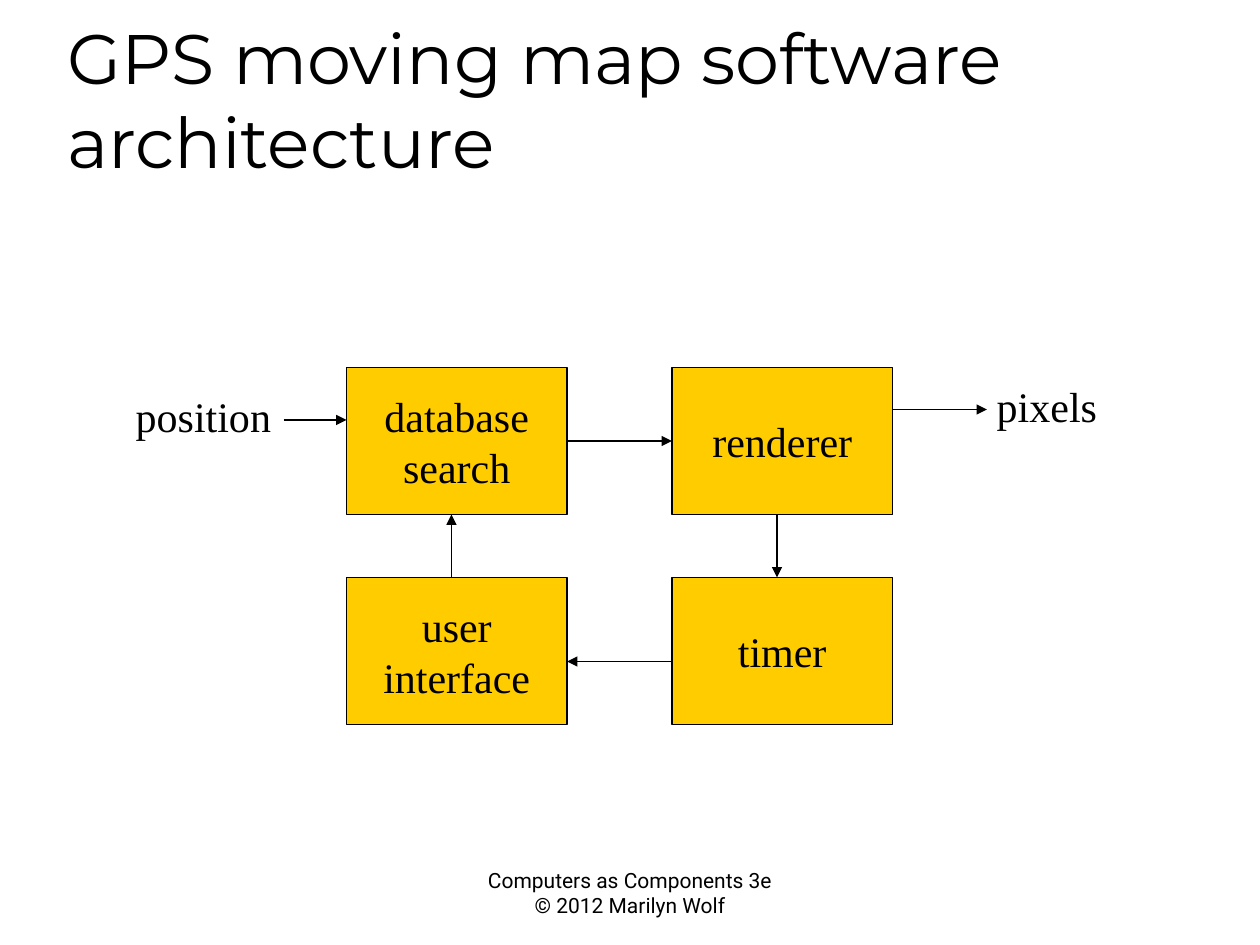
from lxml.etree import SubElement
from pptx import Presentation
from pptx.dml.color import RGBColor
from pptx.enum.shapes import MSO_CONNECTOR, MSO_SHAPE
from pptx.enum.text import MSO_ANCHOR, PP_ALIGN
from pptx.oxml.ns import qn
from pptx.util import Pt

PX = 9525  # 96 px to the inch
BLACK = RGBColor(0x00, 0x00, 0x00)
YELLOW = RGBColor(0xFF, 0xCC, 0x00)

LEFT, RIGHT = 264, 512
TOP, BOTTOM = 280, 440
BLOCK_WIDTH, BLOCK_HEIGHT = 168, 112


def write(shape, text, font="Times New Roman", size=24, align=PP_ALIGN.LEFT,
          anchor=MSO_ANCHOR.TOP, wrap=False):
    """Fill a shape with text, one paragraph for each line."""
    frame = shape.text_frame
    frame.word_wrap = wrap
    frame.vertical_anchor = anchor
    frame.text = text
    for para in frame.paragraphs:
        para.alignment = align
        para.font.name = font
        para.font.size = Pt(size)
        para.font.color.rgb = BLACK


def add_arrow(slide, *ends):
    arrow = slide.shapes.add_connector(
        MSO_CONNECTOR.STRAIGHT, *[end * PX for end in ends])
    arrow.line.color.rgb = BLACK
    arrow.line.width = Pt(0.75)
    SubElement(arrow.line._get_or_add_ln(), qn("a:tailEnd"), type="triangle")
    SubElement(arrow._element.spPr, qn("a:effectLst"))


deck = Presentation()
deck.slide_width = 960 * PX
deck.slide_height = 720 * PX
slide = deck.slides.add_slide(deck.slide_layouts[6])

# Footer and title
footer = slide.shapes.add_textbox(352 * PX, 656 * PX, 256 * PX, 48 * PX)
write(footer, "Computers as Components 3e\n© 2012 Marilyn Wolf",
      font="Roboto", size=12, align=PP_ALIGN.CENTER, wrap=True)
title = slide.shapes.add_textbox(42 * PX, 24 * PX, 816 * PX, 120 * PX)
write(title, "GPS moving map software architecture",
      font="Montserrat", size=40, anchor=MSO_ANCHOR.BOTTOM, wrap=True)

# Blocks of the architecture
for left, top, name in [
    (LEFT, TOP, "database\nsearch"),
    (RIGHT, TOP, "renderer"),
    (RIGHT, BOTTOM, "timer"),
    (LEFT, BOTTOM, "user\ninterface"),
]:
    block = slide.shapes.add_shape(
        MSO_SHAPE.RECTANGLE, left * PX, top * PX,
        BLOCK_WIDTH * PX, BLOCK_HEIGHT * PX)
    block.shadow.inherit = False
    block.fill.solid()
    block.fill.fore_color.rgb = YELLOW
    block.line.color.rgb = BLACK
    block.line.width = Pt(0.75)
    write(block, name, align=PP_ALIGN.CENTER, anchor=MSO_ANCHOR.MIDDLE)

# Input and output
for left, top, width, name in [(94, 293, 122, "position"), (750, 285, 96, "pixels")]:
    label = slide.shapes.add_textbox(left * PX, top * PX, width * PX, 48 * PX)
    write(label, name)

# Data flow
left_edge, right_edge = LEFT + BLOCK_WIDTH, RIGHT + BLOCK_WIDTH
top_edge = TOP + BLOCK_HEIGHT
add_arrow(slide, 216, 320, LEFT, 320)
add_arrow(slide, right_edge, 312, 752, 312)
add_arrow(slide, left_edge, 336, RIGHT, 336)
add_arrow(slide, RIGHT + 80, top_edge, RIGHT + 80, BOTTOM)
add_arrow(slide, RIGHT, 504, left_edge, 504)
add_arrow(slide, LEFT + 80, BOTTOM, LEFT + 80, top_edge)

deck.save("out.pptx")
